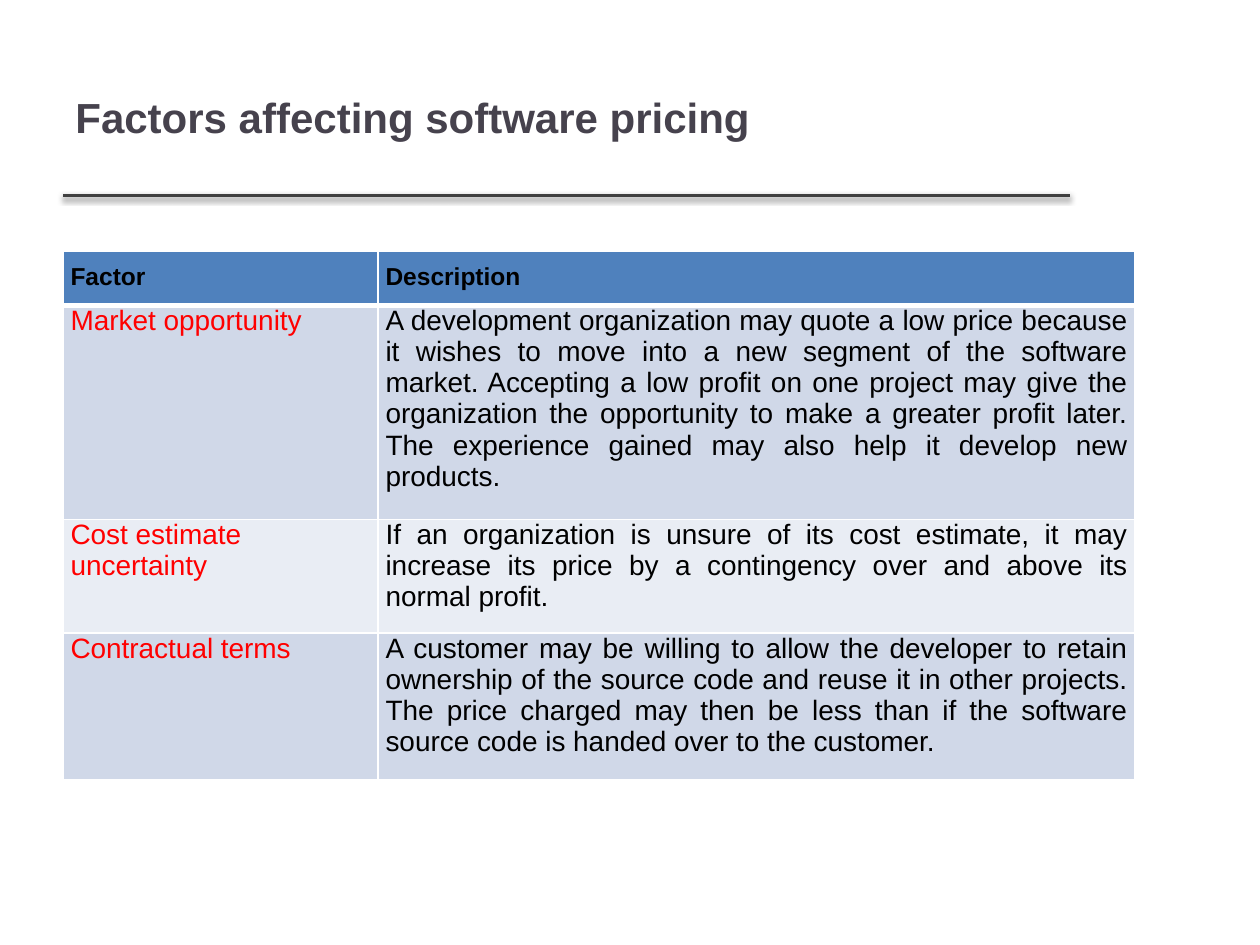
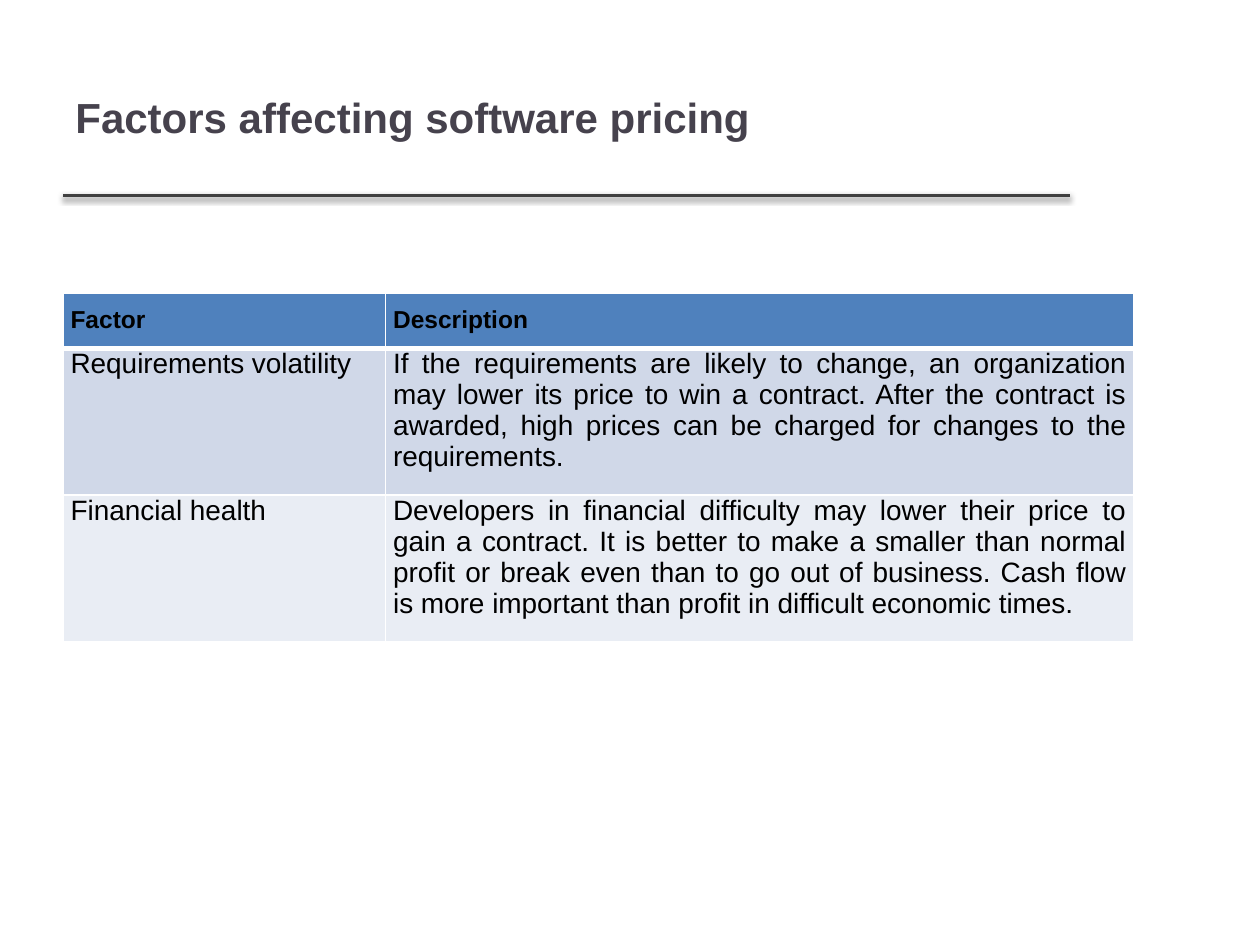
import dataclasses

import lxml.etree
import pptx
import pptx.dml.color
import pptx.enum.shapes
import pptx.enum.text
import pptx.oxml.ns
import pptx.util

Inches = pptx.util.Inches
Pt = pptx.util.Pt
Align = pptx.enum.text.PP_ALIGN
qn = pptx.oxml.ns.qn


@dataclasses.dataclass(frozen=True)
class Theme:
    font: str = "Arial"
    title: str = "46424D"
    rule: str = "404040"
    shade: str = "000000"
    head: str = "4F81BD"
    bands: tuple = ("D0D8E8", "E9EDF4")
    edge: str = "FFFFFF"
    ink: str = "000000"
    accent: str = "FF0000"
    title_size: int = 24
    head_size: int = 14
    body_size: int = 16


def rgb(code):
    return pptx.dml.color.RGBColor.from_string(code)


def add_node(parent, tag, **attrs):
    values = {key: str(value) for key, value in attrs.items()}
    return lxml.etree.SubElement(parent, qn(tag), values)


class Deck:
    def __init__(self, theme):
        self.theme = theme
        self.show = pptx.Presentation()
        self.show.slide_width = Inches(10)
        self.show.slide_height = Inches(7.5)
        self.slide = None

    def page(self, title):
        self.slide = self.show.slides.add_slide(self.show.slide_layouts[6])
        self.rule()
        self.title(title)

    def rule(self):
        y = Inches(1.55)
        line = self.slide.shapes.add_connector(
            pptx.enum.shapes.MSO_CONNECTOR.STRAIGHT, Inches(0.5), y, Inches(8.49), y)
        line.line.color.rgb = rgb(self.theme.rule)
        line.line.width = Pt(2)
        effects = add_node(line._element.spPr, "a:effectLst")
        shadow = add_node(effects, "a:outerShdw", blurRad=Pt(3.1), dist=Pt(1.6),
                          dir=90 * 60000, rotWithShape=0)
        color = add_node(shadow, "a:srgbClr", val=self.theme.shade)
        add_node(color, "a:alpha", val=38000)

    def title(self, text):
        box = self.slide.shapes.add_textbox(
            Inches(0.5), Inches(0.3), Inches(7.98), Inches(1.25))
        box.text_frame.word_wrap = True
        box.text_frame.vertical_anchor = pptx.enum.text.MSO_ANCHOR.MIDDLE
        self.text(box.text_frame, text, self.theme.title_size, self.theme.title, bold=True)

    def text(self, frame, text, size, color, bold=False, align=Align.LEFT):
        para = frame.paragraphs[0]
        para.alignment = align
        run = para.add_run()
        run.text = text
        run.font.name = self.theme.font
        run.font.size = Pt(size)
        run.font.bold = bold
        run.font.color.rgb = rgb(color)

    def edges(self, cell, top, bottom):
        props = cell._tc.get_or_add_tcPr()
        for side, width in (("L", 1), ("R", 1), ("T", top), ("B", bottom)):
            line = add_node(props, "a:ln" + side, w=Pt(width))
            fill = add_node(line, "a:solidFill")
            add_node(fill, "a:srgbClr", val=self.theme.edge)

    def cell(self, cell, text, row, col, color):
        theme = self.theme
        head = row == 0
        self.edges(cell, 3 if row == 1 else 1, 3 if head else 1)
        cell.fill.solid()
        cell.fill.fore_color.rgb = rgb(theme.head if head else theme.bands[(row - 1) % 2])
        cell.margin_left = cell.margin_right = Inches(0.06)
        cell.margin_top = Inches(0.1 if head else 0)
        cell.margin_bottom = Inches(0.1)
        self.text(cell.text_frame, text,
                  theme.head_size if head else theme.body_size,
                  color if col == 0 and not head else theme.ink,
                  bold=head, align=Align.JUSTIFY if head or col else Align.LEFT)

    def table(self, top, height, widths, factors, color):
        rows = [("Factor", "Description"), *factors]
        frame = self.slide.shapes.add_table(
            len(rows), len(widths), Inches(0.5), Inches(top),
            Inches(sum(widths)), Inches(height))
        grid = frame.table
        for col, width in zip(grid.columns, widths):
            col.width = Inches(width)
        for r, row in enumerate(rows):
            grid.rows[r].height = Inches(0.41)
            for c, text in enumerate(row):
                self.cell(grid.cell(r, c), text, r, c, color)
        frame.height = Inches(height)


TITLE = "Factors affecting software pricing"
MARKET = [
    ("Market opportunity",
     "A development organization may quote a low price because it wishes to move into "
     "a new segment of the software market. Accepting a low profit on one project may "
     "give the organization the opportunity to make a greater profit later. The "
     "experience gained may also help it develop new products."),
    ("Cost estimate uncertainty",
     "If an organization is unsure of its cost estimate, it may increase its price by "
     "a contingency over and above its normal profit."),
    ("Contractual terms",
     "A customer may be willing to allow the developer to retain ownership of the "
     "source code and reuse it in other projects. The price charged may then be less "
     "than if the software source code is handed over to the customer."),
]
HEALTH = [
    ("Requirements volatility",
     "If the requirements are likely to change, an organization may lower its price to "
     "win a contract. After the contract is awarded, high prices can be charged for "
     "changes to the requirements."),
    ("Financial health",
     "Developers in financial difficulty may lower their price to gain a contract. It "
     "is better to make a smaller than normal profit or break even than to go out of "
     "business. Cash flow is more important than profit in difficult economic times."),
]


def main():
    theme = Theme()
    deck = Deck(theme)
    deck.page(TITLE)
    deck.table(1.99, 4.2, (2.5, 6.01), MARKET, theme.accent)
    deck.page(TITLE)
    deck.table(2.33, 2.77, (2.56, 5.94), HEALTH, theme.ink)
    deck.show.save("out.pptx")


if __name__ == "__main__":
    main()
